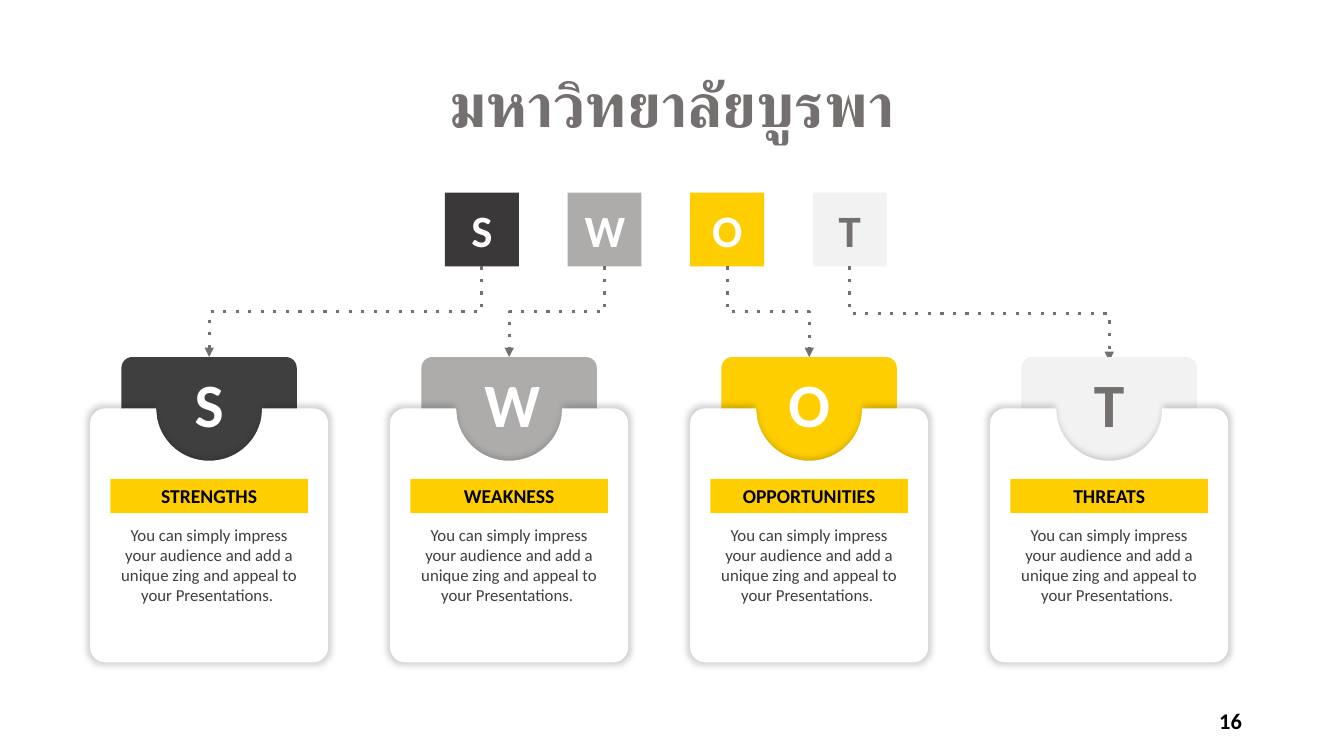
from pptx import Presentation
from pptx.dml.color import RGBColor
from pptx.enum.shapes import MSO_CONNECTOR, MSO_SHAPE
from pptx.enum.text import MSO_ANCHOR as ANCHOR, MSO_AUTO_SIZE as AUTO_SIZE, PP_ALIGN as ALIGN
from pptx.oxml import parse_xml
from pptx.oxml.ns import nsdecls, qn
from pptx.util import Pt

CHARCOAL = RGBColor(0x3A, 0x38, 0x38)
DARK = RGBColor(0x3F, 0x3F, 0x3F)
SILVER = RGBColor(0xAE, 0xAB, 0xAB)
YELLOW = RGBColor(0xFF, 0xCE, 0x00)
PALE = RGBColor(0xF2, 0xF2, 0xF2)
GREY = RGBColor(0x75, 0x70, 0x70)
WHITE = RGBColor(0xFF, 0xFF, 0xFF)
BLACK = RGBColor(0x00, 0x00, 0x00)

BLURB = ("You can simply impress your audience and add a unique zing "
         "and appeal to your Presentations. ")
TOPICS = [
    ("S", "STRENGTHS", CHARCOAL, DARK, WHITE, 64.8),
    ("W", "WEAKNESS", SILVER, SILVER, WHITE, 64.8),
    ("O", "OPPORTUNITIES", YELLOW, YELLOW, WHITE, 64.8),
    ("T", "THREATS", PALE, PALE, GREY, 67.7),
]
TILE_LEFT, TILE_TOP, TILE_SIZE, TILE_PITCH = 317.8, 137.5, 52.8, 87.6
CARD_LEFT, CARD_TOP, CARD_WIDTH, CARD_PITCH = 64.4, 255, 170, 214.3
LETTER_HEIGHT = {32: 46.1, 44: 60.5}


def write(shape, words, color, size, bold=True, align=ALIGN.CENTER, anchor=ANCHOR.TOP, fit=AUTO_SIZE.NONE):
    """Put one formatted paragraph in a shape and return it."""
    frame = shape.text_frame
    for name, value in {"word_wrap": True, "auto_size": fit, "vertical_anchor": anchor}.items():
        setattr(frame, name, value)
    paragraph = frame.paragraphs[0]
    paragraph.alignment = align
    run = paragraph.add_run()
    run.text = words
    for name, value in {"name": "Calibri", "size": Pt(size), "bold": bold}.items():
        setattr(run.font, name, value)
    run.font.color.rgb = color
    return paragraph


def add_label(shapes, box, words, color, size, **layout):
    """Add a text box at a box given in points."""
    return write(shapes.add_textbox(*map(Pt, box)), words, color, size, **layout)


def paint(shape, color):
    """Give a shape a flat fill with no outline or shadow."""
    shape.shadow.inherit = False
    shape.fill.solid()
    shape.fill.fore_color.rgb = color
    shape.line.fill.background()
    return shape


def add_block(shapes, kind, box, color):
    """Add a flat preset shape at a box given in points."""
    return paint(shapes.add_shape(kind, *map(Pt, box)), color)


def add_letter(shapes, middle, top, width, letter, color, size):
    """Add a large letter in a box centred on a given x."""
    box = (middle - width / 2, top, width, LETTER_HEIGHT[size])
    add_label(shapes, box, letter, color, size, fit=AUTO_SIZE.SHAPE_TO_FIT_TEXT)


def bend(lines):
    """Turn three consecutive line segments into one cubic curve."""
    curve = parse_xml(f'<a:cubicBezTo {nsdecls("a")}/>')
    lines[0].addprevious(curve)
    for line in lines:
        curve.append(line[0])
        line.getparent().remove(line)


def add_panel(shapes, left, top, width, height):
    """Add the white rounded panel with a round notch and a soft shadow."""
    corner, pull, middle = 10.6, 4.8, width / 2
    right_half = [
        (middle + 18.6, 37.4), (middle + 33.8, 24.5), (middle + 37.2, 7.2),
        (middle + 37.9, 0), (width - corner, 0),
        (width - pull, 0), (width, pull), (width, corner),
        (width, height - corner),
        (width, height - pull), (width - pull, height), (width - corner, height)]
    left_half = [(width - x, y) for x, y in reversed(right_half)]
    outline = [(Pt(left + x), Pt(top + y))
               for x, y in [(middle, 37.4)] + right_half + left_half + [(middle, 37.4)]]
    builder = shapes.build_freeform(*outline[0], scale=1.0)
    builder.add_line_segments(outline[1:], close=True)
    panel = paint(builder.convert_to_shape(), WHITE)
    segments = list(panel.element.iter(qn("a:lnTo")))
    for first in (0, 5, 9, 13, 17, 22):
        bend(segments[first:first + 3])
    effects = panel.element.spPr.find(qn("a:effectLst"))
    effects.append(parse_xml(
        f'<a:outerShdw {nsdecls("a")} blurRad="{Pt(5)}" sx="102000" sy="102000" algn="ctr" rotWithShape="0">'
        '<a:srgbClr val="000000"><a:alpha val="20000"/></a:srgbClr></a:outerShdw>'))


def add_card(slide, left, top, width, letter, heading, tab_color, letter_color):
    """Add one topic card with its tab, letter, panel, blurb and heading."""
    shapes = slide.shapes.add_group_shape().shapes
    middle = left + width / 2
    tab_width, text_width = 125.3, 141.1
    text_left = middle - text_width / 2
    tab = add_block(shapes, MSO_SHAPE.ROUNDED_RECTANGLE,
                    (middle - tab_width / 2, top, tab_width, 97.2), tab_color)
    tab.adjustments[0] = 0.08
    add_letter(shapes, middle, top + 2.9, 49.7, letter, letter_color, 44)
    add_panel(shapes, left, top + 36.7, width, 181.4)
    add_label(shapes, (text_left, top + 115.9, text_width, 79.9), BLURB, DARK, 12,
              bold=False, fit=AUTO_SIZE.SHAPE_TO_FIT_TEXT)
    banner = add_block(shapes, MSO_SHAPE.RECTANGLE,
                       (text_left, top + 87.1, text_width, 24.5), YELLOW)
    write(banner, heading, BLACK, 14, fit=AUTO_SIZE.SHAPE_TO_FIT_TEXT)


def add_tile(slide, left, top, size, letter, tile_color, letter_color):
    """Add one small square with its letter."""
    add_block(slide.shapes, MSO_SHAPE.RECTANGLE, (left, top, size, size), tile_color)
    add_letter(slide.shapes, left + size / 2, top + 3.7, 42.5, letter, letter_color, 32)


def add_route(slide, start_x, start_y, end_x, drop):
    """Add a dotted elbow arrow that leaves and arrives vertically."""
    middle_x, middle_y = (start_x + end_x) / 2, start_y + drop / 2
    spread = abs(end_x - start_x) / 2
    rightward = end_x > start_x
    reach = -drop / 2 if rightward else drop / 2
    route = slide.shapes.add_connector(
        MSO_CONNECTOR.ELBOW, Pt(middle_x - reach), Pt(middle_y - spread),
        Pt(middle_x + reach), Pt(middle_y + spread))
    properties = route.element.spPr
    properties.find(qn("a:xfrm")).set("rot", str((270 if rightward else 90) * 60000))
    route.line.color.rgb = GREY
    route.line.width = Pt(2.25)
    stroke = properties.find(qn("a:ln"))
    stroke.append(parse_xml(f'<a:prstDash {nsdecls("a")} val="dot"/>'))
    stroke.append(parse_xml(f'<a:tailEnd {nsdecls("a")} type="triangle"/>'))
    properties.append(parse_xml(f'<a:effectLst {nsdecls("a")}/>'))


def build_swot(slide):
    """Place the title, tiles, routes, cards and page number."""
    for index, (letter, _, tile_color, _, letter_color, _) in enumerate(TOPICS):
        add_tile(slide, TILE_LEFT + index * TILE_PITCH, TILE_TOP, TILE_SIZE,
                 letter, tile_color, letter_color)
    for index, (*_, drop) in enumerate(TOPICS):
        add_route(slide, TILE_LEFT + index * TILE_PITCH + TILE_SIZE / 2, TILE_TOP + TILE_SIZE,
                  CARD_LEFT + index * CARD_PITCH + CARD_WIDTH / 2, drop)
    for index, (letter, heading, _, tab_color, letter_color, _) in enumerate(TOPICS):
        add_card(slide, CARD_LEFT + index * CARD_PITCH, CARD_TOP, CARD_WIDTH,
                 letter, heading, tab_color, letter_color)
    title = add_label(slide.shapes, (147.2, 49.7, 666, 65.5), "มหาวิทยาลัยบูรพา", GREY, 44)
    title.line_spacing = 0.9
    add_label(slide.shapes, (678.2, 500.4, 216, 28.8), "16", BLACK, 16,
              align=ALIGN.RIGHT, anchor=ANCHOR.MIDDLE)


def main():
    """Build the slide and save it."""
    deck = Presentation()
    deck.slide_width, deck.slide_height = Pt(960), Pt(540)
    build_swot(deck.slides.add_slide(deck.slide_layouts[6]))
    deck.save("out.pptx")


if __name__ == "__main__":
    main()
